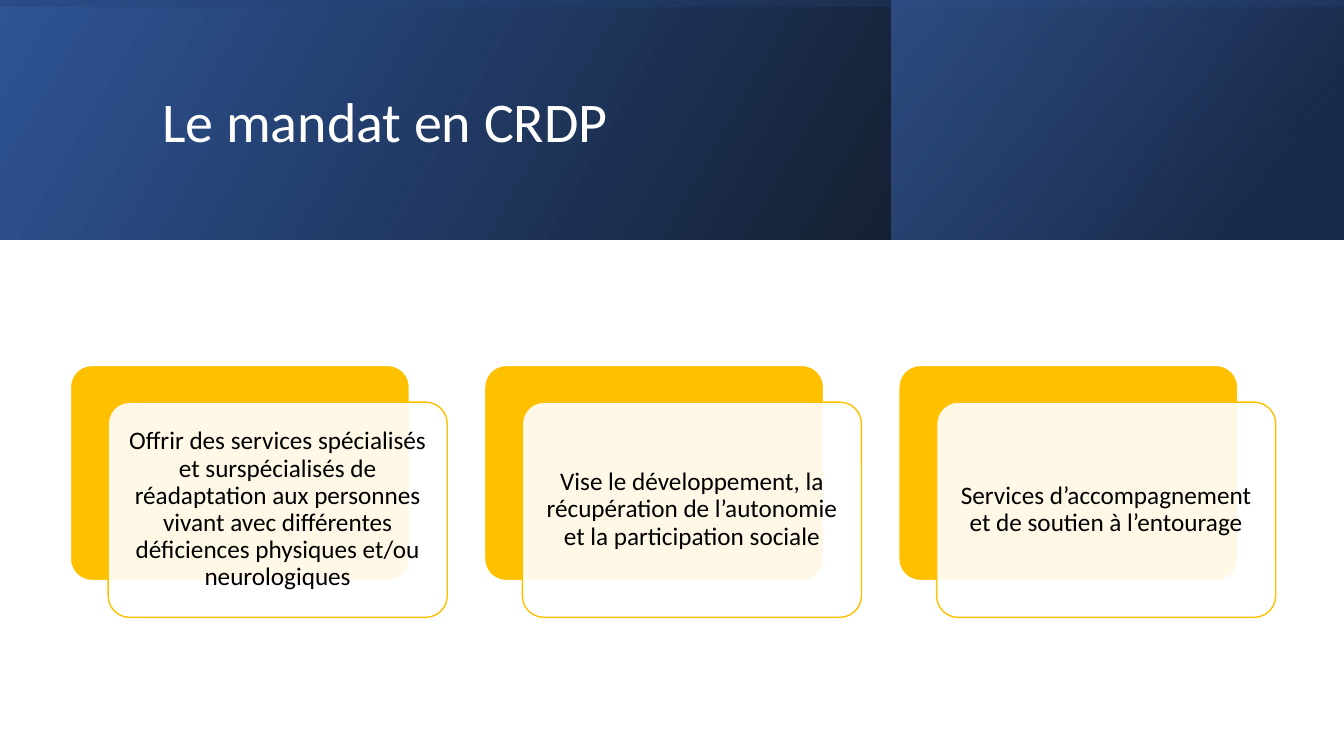
from lxml.etree import SubElement
from pptx import Presentation
from pptx.dml.color import RGBColor
from pptx.enum.shapes import MSO_SHAPE as Shape
from pptx.enum.text import MSO_ANCHOR as Anchor, PP_ALIGN as Align
from pptx.oxml.ns import qn
from pptx.util import Pt

PX = 9525
WIDE, HIGH = 1280, 720
FONT = "Calibri"
WHITE = RGBColor(0xFF, 0xFF, 0xFF)
BLACK = RGBColor(0x00, 0x00, 0x00)
GOLD = RGBColor(0xFF, 0xC0, 0x00)
BLUE = RGBColor(0x2F, 0x55, 0x97)
NAVY = RGBColor(0x20, 0x38, 0x64)
SKY = RGBColor(0x44, 0x72, 0xC4)

TITLE = "Le mandat en CRDP"
GOALS = [
    "Offrir des services spécialisés et surspécialisés de réadaptation aux "
    "personnes vivant avec différentes déficiences physiques et/ou neurologiques",
    "Vise le développement, la récupération de l’autonomie et la participation sociale",
    "Services d’accompagnement et de soutien à l’entourage",
]


def emu(*sizes):
    return [round(size * PX) for size in sizes]


def write(shape, text, size=18, color=BLACK, align=Align.CENTER, inset=None):
    frame = shape.text_frame
    frame.text = text
    frame.word_wrap = True
    frame.vertical_anchor = Anchor.MIDDLE
    if inset is not None:
        frame.margin_left = frame.margin_right = inset * PX
        frame.margin_top = frame.margin_bottom = inset * PX
    para = frame.paragraphs[0]
    para.alignment = align
    para.line_spacing = 0.9
    font = para.runs[0].font
    font.name, font.size, font.color.rgb = FONT, Pt(size), color


def set_alpha(color, share):
    SubElement(color, qn("a:alpha"), val=str(share * 1000))


def add_fade(slide, box, stops, angle, turn=0):
    """Add a mirrored rectangle whose stops are (place, colour, opacity)."""
    shape = slide.shapes.add_shape(Shape.RECTANGLE, *emu(*box))
    shape.shadow.inherit = False
    shape.line.fill.background()
    shape.rotation = turn
    shape.element.spPr.find(qn("a:xfrm")).set("flipH", "1")
    shape.fill.gradient()
    grad = shape.element.spPr.find(qn("a:gradFill"))
    for child in list(grad):
        grad.remove(child)
    group = SubElement(grad, qn("a:gsLst"))
    for place, color, share in stops:
        stop = SubElement(group, qn("a:gs"), pos=str(place * 1000))
        set_alpha(SubElement(stop, qn("a:srgbClr"), val=str(color)), share)
    SubElement(grad, qn("a:lin"), ang=str(angle * 60000), scaled="0")


def add_banner(slide, x, y, w, h):
    add_fade(slide, (x, y, w, h), [(0, BLACK, 96), (100, BLUE, 100)], 330)
    side = 431
    add_fade(slide, (x + w - side, y, side, h),
             [(19, NAVY, 68), (100, SKY, 48)], 320)
    # A quarter turn swaps the sides around the banner's centre.
    add_fade(slide, (x + (w - h) / 2, y + (h - w) / 2, h, w),
             [(23, BLUE, 16), (99, BLACK, 45)], 350, turn=270)

    title = slide.shapes.title
    title.left, title.top, title.width, title.height = emu(
        x + 145, y + 36, w - 260, 165)
    write(title, TITLE, size=40, color=WHITE, align=Align.LEFT)
    title.element.getparent().append(title.element)


def add_panel(slide, box, fill, line):
    panel = slide.shapes.add_shape(Shape.ROUNDED_RECTANGLE, *emu(*box))
    panel.adjustments[0] = 0.1
    panel.shadow.inherit = False
    panel.fill.solid()
    panel.fill.fore_color.rgb = fill
    panel.line.color.rgb = line
    panel.line.width = Pt(1)
    return panel


def add_card(slide, x, y, w, h, text):
    dx, dy = 36, 35
    add_panel(slide, (x, y, w - dx, h - dy), GOLD, WHITE)
    front = add_panel(slide, (x + dx, y + dy, w - dx, h - dy), WHITE, GOLD)
    set_alpha(front.element.spPr.find(qn("a:solidFill"))[0], 90)
    write(front, text, inset=7)


def add_cards(slide, x, y, w, h):
    card = 359
    step = (w - card) / (len(GOALS) - 1)
    for i, goal in enumerate(GOALS):
        add_card(slide, x + i * step, y, card, h, goal)


def main():
    deck = Presentation()
    deck.slide_width, deck.slide_height = emu(WIDE, HIGH)
    slide = deck.slides.add_slide(deck.slide_layouts[5])
    add_banner(slide, 0, 0, WIDE, 228)
    add_cards(slide, 67, 348, 1148, 240)
    deck.save("out.pptx")


if __name__ == "__main__":
    main()
